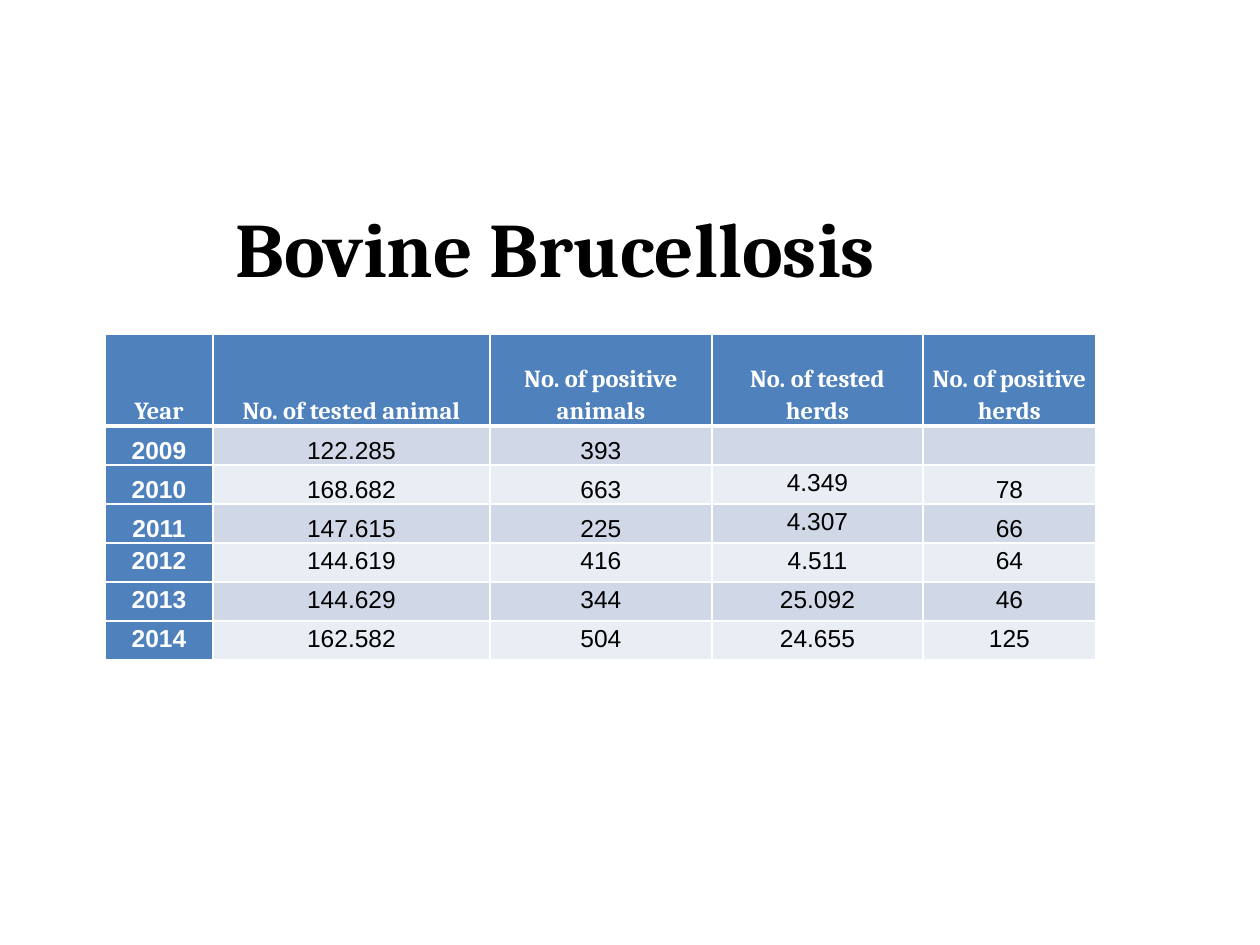
from dataclasses import dataclass

from lxml import etree
from pptx import Presentation
from pptx.dml.color import RGBColor
from pptx.enum.text import MSO_ANCHOR, PP_ALIGN
from pptx.oxml.ns import qn
from pptx.util import Pt

TOP, MIDDLE, BOTTOM = MSO_ANCHOR.TOP, MSO_ANCHOR.MIDDLE, MSO_ANCHOR.BOTTOM
CENTER = PP_ALIGN.CENTER
SCALE = 914400 / 126


@dataclass(frozen=True)
class Theme:
    font: str = "Cambria"
    digits: str = "Arial"
    title: int = 44
    body: int = 14
    ink: str = "000000"
    white: str = "FFFFFF"
    head: str = "4F81BD"
    bands: tuple = ("D0D8E8", "E9EDF4")


THEME = Theme()
HEADS = ["Year", "No. of tested animal", "No. of positive animals",
         "No. of tested herds", "No. of positive herds"]
ROWS = [
    ["2009", "122.285", "393", "", ""],
    ["2010", "168.682", "663", "4.349", "78"],
    ["2011", "147.615", "225", "4.307", "66"],
    ["2012", "144.619", "416", "4.511", "64"],
    ["2013", "144.629", "344", "25.092", "46"],
    ["2014", "162.582", "504", "24.655", "125"],
]
WIDTHS = [108, 277, 222, 211, 173]
HEAD_TALL, ROW_TALL = 92, 39
HERDS = 3
LAST_LOW = 3


def px(n):
    return round(n * SCALE)


def add_run(para, text, size, color, bold):
    run = para.add_run()
    run.text = text
    font = run.font
    font.name, font.size, font.bold = THEME.font, Pt(size), bold
    font.color.rgb = RGBColor.from_string(color)
    return run


def add_title(slide, box, text):
    frame = slide.shapes.add_textbox(*map(px, box)).text_frame
    frame.word_wrap = True
    frame.vertical_anchor = MIDDLE
    para = frame.paragraphs[0]
    para.alignment = CENTER
    add_run(para, text, THEME.title, THEME.ink, True)


def add_edges(cell, base):
    props = cell._tc.get_or_add_tcPr()
    for side, width in (("L", 1), ("R", 1), ("T", 1), ("B", base)):
        line = etree.SubElement(props, qn(f"a:ln{side}"), w=str(Pt(width)))
        fill = etree.SubElement(line, qn("a:solidFill"))
        etree.SubElement(fill, qn("a:srgbClr"), val=THEME.white)


def fill_cell(cell, text, row, col):
    label = row == 0 or col == 0
    add_edges(cell, 3 if row == 0 else 1)
    cell.fill.solid()
    tint = THEME.head if label else THEME.bands[(row - 1) % 2]
    cell.fill.fore_color.rgb = RGBColor.from_string(tint)
    cell.margin_left = cell.margin_right = px(9)
    cell.margin_top = cell.margin_bottom = 0
    low = row == 0 or row <= LAST_LOW and col != HERDS
    cell.vertical_anchor = BOTTOM if low else TOP
    para = cell.text_frame.paragraphs[0]
    para.alignment = CENTER
    para.line_spacing = 1.15
    para._p.get_or_add_pPr().set("rtl", "1")
    if text:
        color = THEME.white if label else THEME.ink
        run = add_run(para, text, THEME.body, color, label)
        etree.SubElement(run._r.get_or_add_rPr(), qn("a:cs"),
                         typeface=THEME.digits)
    else:
        etree.SubElement(para._p, qn("a:endParaRPr"), sz=str(THEME.body * 100))


def add_grid(slide, left, top):
    data = [HEADS, *ROWS]
    tall = HEAD_TALL + ROW_TALL * len(ROWS)
    box = (left, top, sum(WIDTHS), tall)
    table = slide.shapes.add_table(len(data), len(HEADS), *map(px, box)).table
    table.first_col = True
    for col, width in enumerate(WIDTHS):
        table.columns[col].width = px(width)
    for row, texts in enumerate(data):
        table.rows[row].height = px(ROW_TALL if row else HEAD_TALL)
        for col, text in enumerate(texts):
            fill_cell(table.cell(row, col), text, row, col)


def main():
    deck = Presentation()
    deck.slide_width, deck.slide_height = px(1260), px(945)
    slide = deck.slides.add_slide(deck.slide_layouts[6])
    add_title(slide, (39, 207, 1033, 79), "Bovine Brucellosis")
    add_grid(slide, 105, 334)
    deck.save("out.pptx")


if __name__ == "__main__":
    main()
